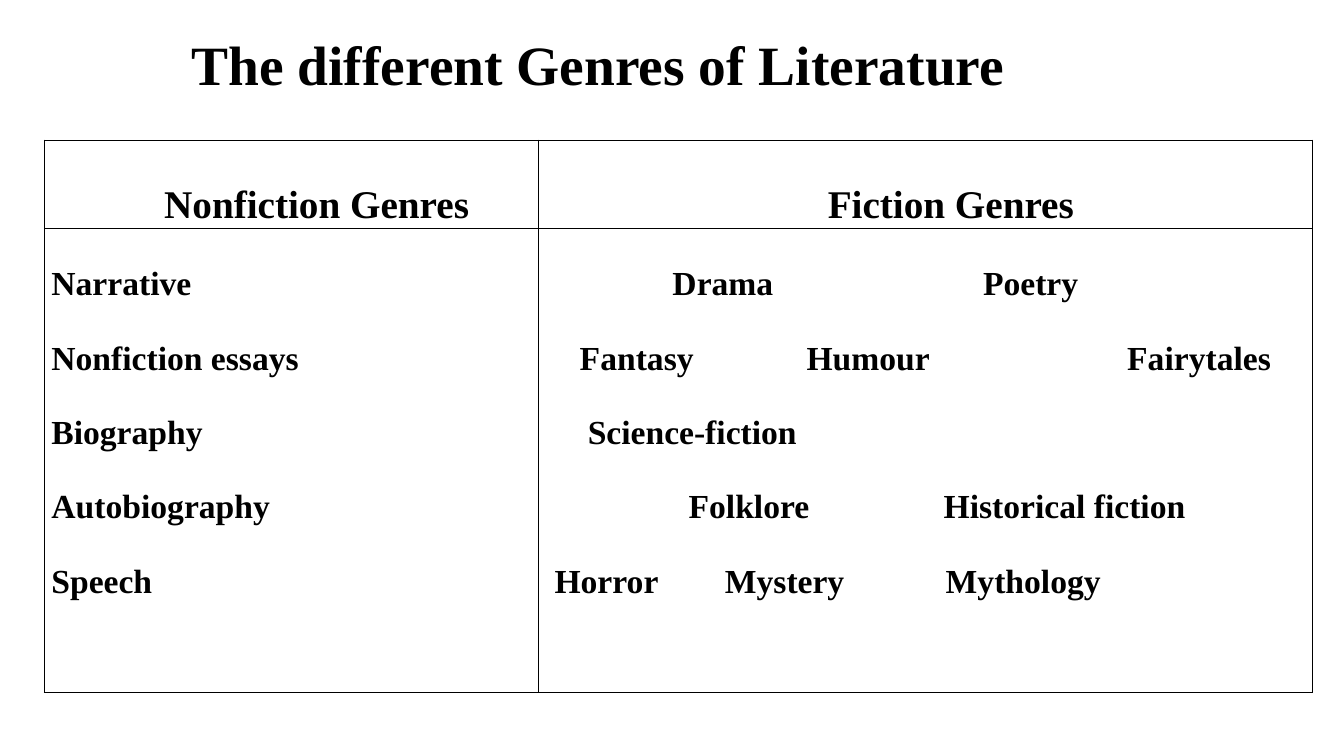
from dataclasses import dataclass
from lxml.etree import SubElement
from pptx import Presentation
from pptx.dml.color import RGBColor
from pptx.enum.text import MSO_ANCHOR, MSO_AUTO_SIZE, PP_ALIGN
from pptx.oxml.ns import qn
from pptx.util import Inches, Pt


@dataclass(frozen=True)
class Theme:
    font: str = "Times New Roman"
    ink: str = "000000"
    title: float = 39.6
    head: float = 28
    body: float = 24
    rule: float = 1


THEME = Theme()
HEADS = ["Nonfiction Genres", "Fiction Genres"]
FACTS = ["Narrative", "Nonfiction essays", "Biography", "Autobiography", "Speech"]
TALES = [
    [("Drama", 1.26), ("Poetry", 4.34)],
    [("Fantasy", 0.34), ("Humour", 2.59), ("Fairytales", 5.77)],
    [("Science-fiction", 0.42)],
    [("Folklore", 1.42), ("Historical fiction", 3.95)],
    [("Horror", 0.09), ("Mystery", 1.78), ("Mythology", 3.97)],
]


def write(para, text, size):
    run = para.add_run()
    run.text = text
    font = run.font
    font.name, font.size, font.bold = THEME.font, Pt(size), True
    font.color.rgb = RGBColor.from_string(THEME.ink)


def set_tabs(para, stops):
    tabs = SubElement(para._p.get_or_add_pPr(), qn("a:tabLst"))
    for stop in stops:
        SubElement(tabs, qn("a:tab"), pos=str(Inches(stop)), algn="l")


def frame_cell(cell):
    cell.margin_left = cell.margin_right = Inches(0.07)
    cell.margin_top = cell.margin_bottom = 0
    props = cell._tc.get_or_add_tcPr()
    for side in "LRTB":
        line = SubElement(props, qn(f"a:ln{side}"), w=str(Pt(THEME.rule)))
        fill = SubElement(line, qn("a:solidFill"))
        SubElement(fill, qn("a:srgbClr"), val=THEME.ink)
    cell.fill.background()


def add_lines(cell, count, align):
    frame = cell.text_frame
    for _ in range(count - 1):
        frame.add_paragraph()
    for para in frame.paragraphs:
        para.alignment = align
        para.line_spacing = 2.0
    return frame.paragraphs


def add_title(slide, left, top, width, height):
    title = slide.shapes.title
    title.left, title.top = Inches(left), Inches(top)
    title.width, title.height = Inches(width), Inches(height)
    frame = title.text_frame
    frame.word_wrap = True
    frame.auto_size = MSO_AUTO_SIZE.NONE
    frame.vertical_anchor = MSO_ANCHOR.MIDDLE
    para = frame.paragraphs[0]
    para.alignment = PP_ALIGN.LEFT
    para.line_spacing = 0.9
    write(para, "The different Genres of Literature", THEME.title)


def add_genres(slide, left, top, widths, heights):
    shape = slide.shapes.add_table(
        len(heights), len(widths), Inches(left), Inches(top),
        Inches(sum(widths)), Inches(sum(heights)))
    table = shape.table
    table.first_row = table.horz_banding = False
    for col, width in zip(table.columns, widths):
        col.width = Inches(width)
    for row, height in zip(table.rows, heights):
        row.height = Inches(height)
    for cell in table.iter_cells():
        frame_cell(cell)

    for col, head in enumerate(HEADS):
        para = add_lines(table.cell(0, col), 1, PP_ALIGN.CENTER)[0]
        props = para._p.get_or_add_pPr()
        props.set("marL", str(Inches(0.5)))
        props.set("indent", "0")
        write(para, head, THEME.head)

    facts = add_lines(table.cell(1, 0), len(FACTS), PP_ALIGN.JUSTIFY)
    for para, fact in zip(facts, FACTS):
        write(para, fact, THEME.body)

    tales = add_lines(table.cell(1, 1), len(TALES), PP_ALIGN.JUSTIFY)
    for para, line in zip(tales, TALES):
        set_tabs(para, [stop for _, stop in line])
        for name, _ in line:
            write(para, "\t" + name, THEME.body)


def main():
    deck = Presentation()
    deck.slide_width, deck.slide_height = Inches(13.33), Inches(7.5)
    slide = deck.slides.add_slide(deck.slide_layouts[5])
    add_title(slide, 1.8, 0.11, 10.49, 1.13)
    add_genres(slide, 0.44, 1.39, [4.9, 7.68], [0.88, 4.6])
    deck.save("out.pptx")


if __name__ == "__main__":
    main()
